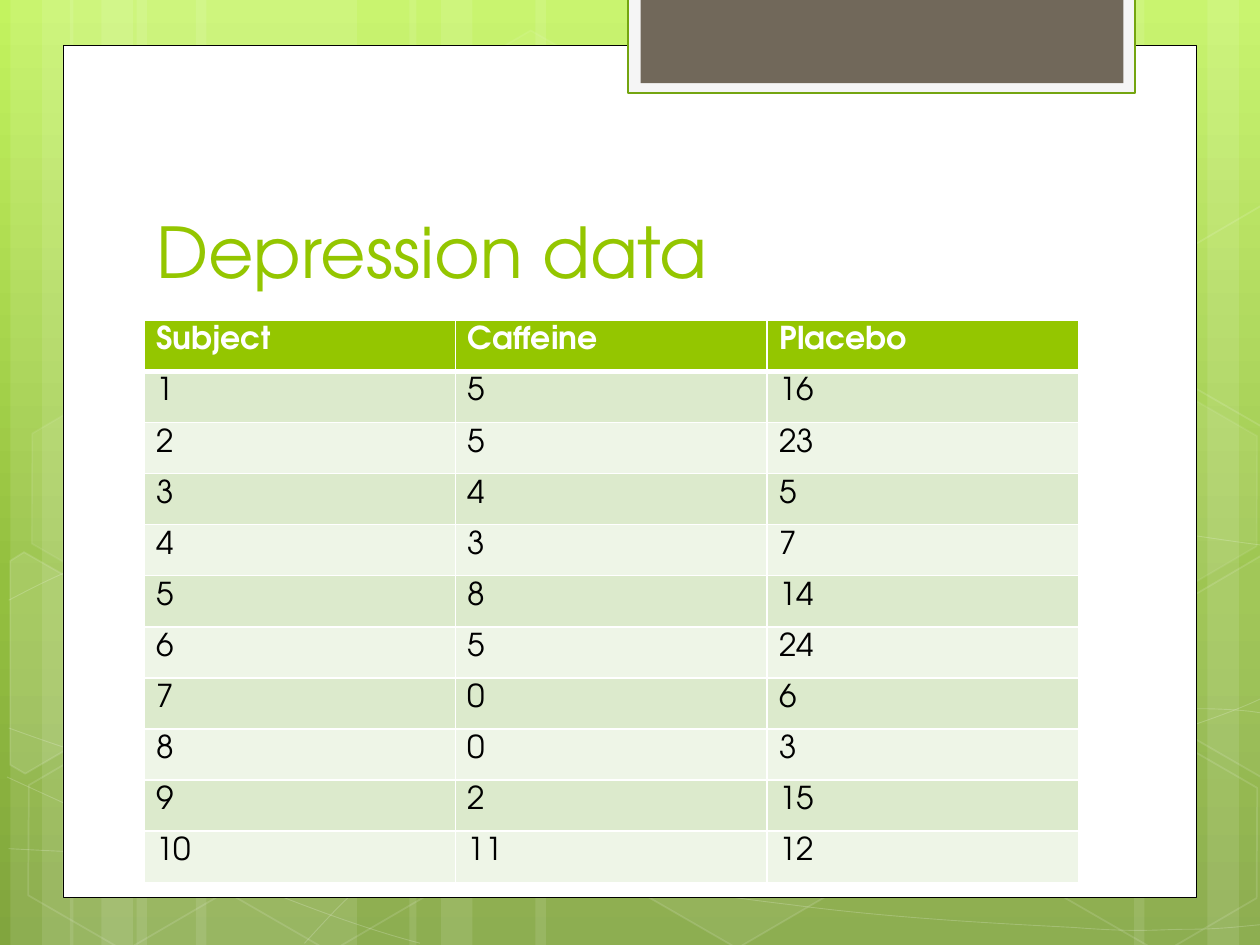
"""Build the depression data slide: a green backdrop, a white panel, a title and a table."""
from math import cos, radians, sin
from lxml.etree import SubElement
from pptx import Presentation
from pptx.dml.color import RGBColor
from pptx.enum.shapes import MSO_SHAPE
from pptx.enum.text import MSO_ANCHOR, MSO_AUTO_SIZE, PP_ALIGN
from pptx.oxml.ns import qn
from pptx.util import Pt

TITLE = "Depression data"
HEAD = ("Subject", "Caffeine", "Placebo")
CAFFEINE = (5, 5, 4, 3, 8, 5, 0, 0, 2, 11)
PLACEBO = (16, 23, 5, 7, 14, 24, 6, 3, 15, 12)
ROWS = [HEAD, *zip(range(1, 11), CAFFEINE, PLACEBO)]

THEME = {
    "font": "TeX Gyre Adventor", "title": 40, "body": 18,
    "green": "94C600", "white": "FFFFFF", "black": "000000",
    "bands": ("EEF5E7", "DCEACC"),
    "tab": "F5F5F5", "edge": "74A510", "brown": "71685A",
    "sky": ((0, "C3F35F"), (62, "93BF3F"), (100, "81A53E")),
}
WIDE, HIGH = 720, 540

TRIO = ((78, 126), (6, 36), (24, 60))
STARTS = (0, 34)
MIRROR = 732
CENTER = ((306, 222), (234, 36), (252, 60))

CURVES = [
    ((5, 485), (44, 487, 83, 489, 137, 488), (191, 487, 258, 486, 330, 479),
     (402, 472, 504, 458, 570, 444), (636, 431, 703, 409, 725, 397)),
    ((5, 343), (26, 332, 47, 321, 87, 310), (128, 300, 186, 284, 250, 279),
     (314, 274, 392, 273, 471, 279), (550, 284, 682, 307, 725, 312)),
    ((4, 444), (91, 484, 178, 523, 240, 539)),
    ((5, 416), (27, 424, 50, 432, 92, 444), (134, 454, 197, 472, 257, 485),
     (317, 497, 392, 510, 452, 517), (512, 525, 576, 528, 614, 530),
     (652, 533, 662, 531, 680, 531), (699, 531, 712, 529, 725, 528)),
    ((174, 539), (187, 525, 200, 510, 217, 498), (235, 485, 259, 470, 279, 460),
     (300, 450, 312, 446, 338, 438), (364, 431, 413, 421, 438, 416),
     (464, 411, 467, 411, 490, 410), (512, 408, 547, 405, 572, 405),
     (597, 404, 638, 405, 638, 405), (686, 405),
     (699, 405, 712, 406, 718, 407), (724, 408, 722, 407, 724, 408)),
]
TILT = 30
HEXES = [
    (240.5, 26, 4, 8), (358, 424, 6, 12), (8, 425.5, 0, 12), (10, 224.5, 7, 8),
    (125.5, 426, 0, 12), (542, 326, 10, 12), (600.5, 427, 0, 12), (600.5, 226, 7, 8),
]
SHARDS = [
    (10, (25.9, 385.2), ((5.8, 320.4), (13.7, 315.4), (69, 347), (68.4, 410.4),
                         (14.4, 442), (5.8, 437))),
    (4, (709.2, 374.4), ((666.7, 349.2), (720.7, 317.5), (726.5, 321), (726.5, 441.4),
                         (721.4, 444.2), (666.7, 412.6))),
    (0, (709.2, 173.5), ((666.7, 149), (720.7, 117.4), (727.2, 121), (726.5, 241.2),
                         (721.4, 244), (666.7, 212.4))),
]
PANEL = (36, 26, 648, 487)
TAB = (359, -1.4, 289.6, 54.7)
INNER = (366, -1.4, 276, 48.9)
TITLE_BOX = (82.2, 80.6, 553, 90)
GRID = (82.2, 183, 534, 321.2)


def points(box):
    return [Pt(value) for value in box]


def color(code):
    return RGBColor.from_string(code)


def fade(parent, alpha):
    tint = parent.find(".//" + qn("a:srgbClr"))
    SubElement(tint, qn("a:alpha")).set("val", str(alpha * 1000))


def paint(shape, fill=None, line=None, width=0, clear=100, faint=100):
    shape.shadow.inherit = False
    props = shape.element.spPr
    if fill and clear:
        shape.fill.solid()
        shape.fill.fore_color.rgb = color(fill)
        if clear < 100:
            fade(props.find(qn("a:solidFill")), clear)
    else:
        shape.fill.background()
    if line:
        shape.line.color.rgb = color(line)
        shape.line.width = Pt(width)
        if faint < 100:
            fade(props.find(qn("a:ln")), faint)
    else:
        shape.line.fill.background()


def block(slide, kind, box):
    return slide.shapes.add_shape(kind, *points(box))


def trace(slide, spots, close):
    first, *rest = [points(spot) for spot in spots]
    maker = slide.shapes.build_freeform(*first)
    maker.add_line_segments(rest, close=close)
    return maker.convert_to_shape()


def bend(slide, curve):
    spots = [part[i:i + 2] for part in curve for i in range(0, len(part), 2)]
    shape = trace(slide, spots, False)
    route = shape.element.find(".//" + qn("a:path"))
    lines = iter(route.findall(qn("a:lnTo")))
    for part in curve[1:]:
        arc = next(lines)
        if len(part) == 6:
            arc.tag = qn("a:cubicBezTo")
            for line in (next(lines), next(lines)):
                arc.append(line[0])
                route.remove(line)
    return shape


def level(spots, hub):
    turn = radians(TILT)
    for x, y in spots:
        across, down = x - hub[0], y - hub[1]
        yield (hub[0] + across * cos(turn) + down * sin(turn),
               hub[1] - across * sin(turn) + down * cos(turn))


def backdrop(slide):
    fill = slide.background.fill
    fill.gradient()
    fill.gradient_angle = 270
    stops = slide.element.find(".//" + qn("a:gsLst"))
    for stop in list(stops):
        stops.remove(stop)
    for place, code in THEME["sky"]:
        stop = SubElement(stops, qn("a:gs"), pos=str(place * 1000))
        SubElement(stop, qn("a:srgbClr"), val=code)

    white = THEME["white"]
    strips = [(start + left, width) for start in STARTS for left, width in TRIO]
    strips += [(MIRROR - left - width, width) for left, width in TRIO]
    for left, width in [*strips, *CENTER]:
        paint(block(slide, MSO_SHAPE.RECTANGLE, (left, 0, width, HIGH)), white, clear=10)
    for curve in CURVES:
        paint(bend(slide, curve), line=white, width=0.5, faint=20)
    for left, top, clear, faint in HEXES:
        cell = block(slide, MSO_SHAPE.HEXAGON, (left, top, 126, 109.4))
        cell.adjustments[0] = 0.285
        cell.rotation = TILT
        paint(cell, white, white, 1, clear, faint)
    for clear, hub, spots in SHARDS:
        shard = trace(slide, level(spots, hub), True)
        shard.rotation = TILT
        paint(shard, white, white, 1, clear, 12)


def frame(slide):
    for box, fill, line, width in (
        (PANEL, THEME["white"], THEME["black"], 0.5),
        (TAB, THEME["tab"], THEME["edge"], 1.25),
        (INNER, THEME["brown"], None, 0),
    ):
        paint(block(slide, MSO_SHAPE.RECTANGLE, box), fill, line, width)


def style(para, size, code, bold=False):
    font = para.font
    font.name, font.size, font.bold = THEME["font"], Pt(size), bold
    font.color.rgb = color(code)
    para.alignment = PP_ALIGN.LEFT


def heading(slide):
    title = slide.shapes.title
    title.left, title.top, title.width, title.height = points(TITLE_BOX)
    title.element.getparent().append(title.element)
    text = title.text_frame
    text.text = TITLE
    text.auto_size = MSO_AUTO_SIZE.NONE
    text.vertical_anchor = MSO_ANCHOR.BOTTOM
    style(text.paragraphs[0], THEME["title"], THEME["green"])


def border(cell, sides):
    props = cell._tc.get_or_add_tcPr()
    for spot, (side, width) in enumerate(sides.items()):
        line = SubElement(props, qn("a:ln" + side), w=str(Pt(width)))
        fill = SubElement(line, qn("a:solidFill"))
        SubElement(fill, qn("a:srgbClr"), val=THEME["white"])
        props.insert(spot, line)


def grid(slide):
    table = slide.shapes.add_table(len(ROWS), len(HEAD), *points(GRID)).table
    for row, values in enumerate(ROWS):
        top = row == 0
        table.rows[row].height = Pt(GRID[3] / len(ROWS))
        for col, value in enumerate(values):
            cell = table.cell(row, col)
            cell.text = str(value)
            cell.fill.solid()
            cell.fill.fore_color.rgb = color(THEME["green"] if top else THEME["bands"][row % 2])
            style(cell.text_frame.paragraphs[0], THEME["body"],
                  THEME["white" if top else "black"], top)
            border(cell, {"L": 1, "R": 1, "T": 3 if row == 1 else 1, "B": 3 if top else 1})


deck = Presentation()
deck.slide_width, deck.slide_height = Pt(WIDE), Pt(HIGH)
page = deck.slides.add_slide(deck.slide_layouts[5])
backdrop(page)
frame(page)
heading(page)
grid(page)
deck.save("out.pptx")
